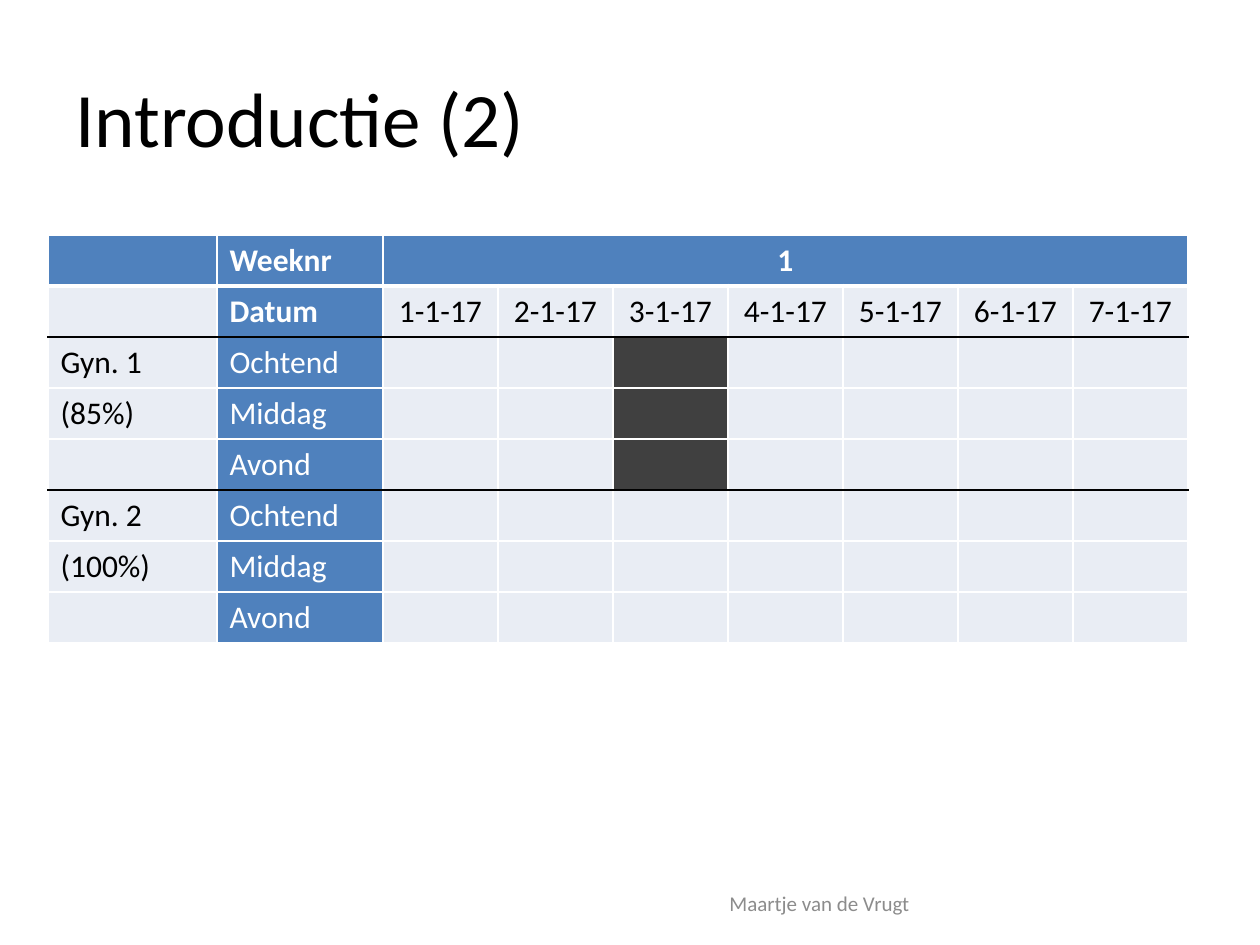
from lxml.etree import SubElement
from pptx import Presentation
from pptx.dml.color import RGBColor
from pptx.enum.text import MSO_ANCHOR as Anchor, PP_ALIGN as Align
from pptx.oxml.ns import qn
from pptx.util import Pt

PX = 914400 // 126
FONT = "Calibri"
BLACK, WHITE, GREY = "000000", "FFFFFF", "8C8C8C"
BLUE, PALE, DARK = "4F81BD", "E9EDF4", "404040"

TITLE = ("Introductie (2)", (63, 38, 1134, 157), 44, BLACK, Align.LEFT)
FOOTER = ("Maartje van de Vrugt", (620, 878, 399, 50), 12, GREY, Align.CENTER)

DATES = [f"{day}-1-17" for day in range(1, 8)]
SHIFTS = ["Ochtend", "Middag", "Avond"]
DOCTORS = [("Gyn. 1", "(85%)", ""), ("Gyn. 2", "(100%)", "")]
SCHEDULE = [["", "Weeknr", "1"], ["", "Datum", *DATES]]
SCHEDULE += [[label, shift] for doctor in DOCTORS for label, shift in zip(doctor, SHIFTS)]

TABLE_LEFT, TABLE_TOP, ROW_HEIGHT = 48, 235, 51
COLUMN_WIDTHS = [169, 166] + [115] * len(DATES)
BLOCKED = {(row, 4) for row in (2, 3, 4)}
RULES_BELOW = {0: (WHITE, 3), 1: (BLACK, 1), 4: (BLACK, 1)}
THIN = (WHITE, 1)


def color(value):
    return RGBColor.from_string(value)


def style(paragraph, size, ink, align, bold=False):
    paragraph.alignment = align
    font = paragraph.font
    font.name, font.size, font.bold = FONT, Pt(size), bold
    font.color.rgb = color(ink)


def add_label(slide, text, place, size, ink, align):
    box = slide.shapes.add_textbox(*(n * PX for n in place))
    frame = box.text_frame
    frame.word_wrap = True
    frame.vertical_anchor = Anchor.MIDDLE
    frame.text = text
    style(frame.paragraphs[0], size, ink, align)


def set_borders(cell, row):
    above = RULES_BELOW.get(row - 1, THIN)
    below = RULES_BELOW.get(row, THIN)
    properties = cell._tc.get_or_add_tcPr()
    for side, (ink, width) in zip("LRTB", (THIN, THIN, above, below)):
        line = SubElement(properties, qn(f"a:ln{side}"), w=str(Pt(width)))
        SubElement(SubElement(line, qn("a:solidFill")), qn("a:srgbClr"), val=ink)


def add_schedule(slide):
    rows, columns = len(SCHEDULE), len(COLUMN_WIDTHS)
    table = slide.shapes.add_table(
        rows, columns, TABLE_LEFT * PX, TABLE_TOP * PX,
        sum(COLUMN_WIDTHS) * PX, rows * ROW_HEIGHT * PX).table
    for column, width in zip(table.columns, COLUMN_WIDTHS):
        column.width = width * PX
    for r, texts in enumerate(SCHEDULE):
        table.rows[r].height = ROW_HEIGHT * PX
        for c in range(columns):
            cell = table.cell(r, c)
            heading = r == 0 or c == 1
            set_borders(cell, r)
            cell.fill.solid()
            cell.fill.fore_color.rgb = color(
                DARK if (r, c) in BLOCKED else BLUE if heading else PALE)
            if c < len(texts) and texts[c]:
                cell.text = texts[c]
                style(cell.text_frame.paragraphs[0], 18, WHITE if heading else BLACK,
                      Align.CENTER if c > 1 else Align.LEFT, heading and r < 2)
    table.cell(0, 2).merge(table.cell(0, columns - 1))


def main():
    deck = Presentation()
    deck.slide_width, deck.slide_height = 1260 * PX, 945 * PX
    slide = deck.slides.add_slide(deck.slide_layouts[6])
    add_label(slide, *TITLE)
    add_label(slide, *FOOTER)
    add_schedule(slide)
    deck.save("out.pptx")


if __name__ == "__main__":
    main()
